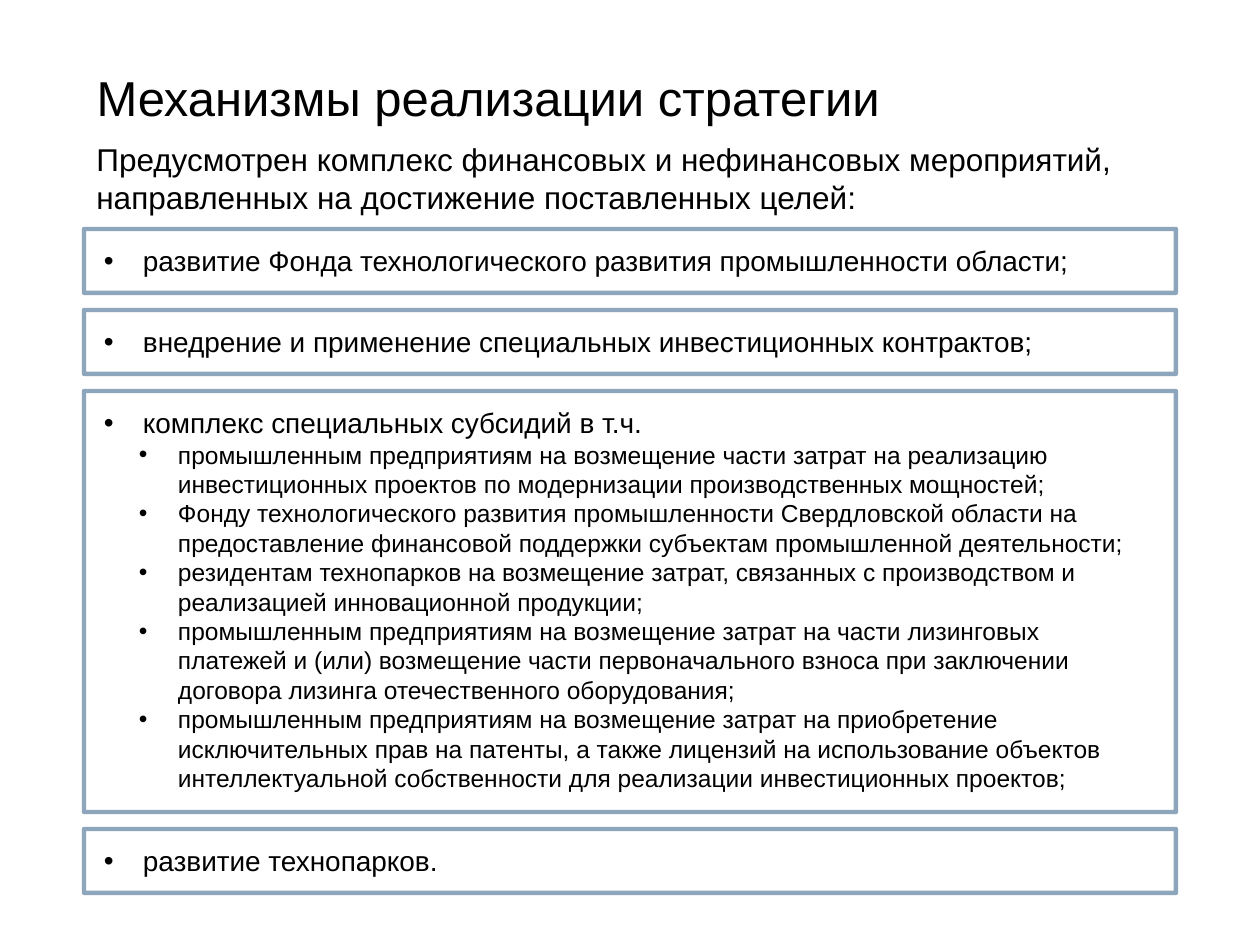
"""Build a slide listing the mechanisms that carry out a regional industry strategy."""
import lxml.etree
import pptx
import pptx.dml.color
import pptx.enum.shapes
import pptx.enum.text
import pptx.oxml.ns
import pptx.util

TITLE = "Механизмы реализации стратегии"
INTRO = (
    "Предусмотрен комплекс финансовых и нефинансовых мероприятий, "
    "направленных на достижение поставленных целей:"
)
SUBSIDIES = [
    "промышленным предприятиям на возмещение части затрат на реализацию "
    "инвестиционных проектов по модернизации производственных мощностей;",
    "Фонду технологического развития промышленности Свердловской области на "
    "предоставление финансовой поддержки субъектам промышленной деятельности;",
    "резидентам технопарков на возмещение затрат, связанных с производством и "
    "реализацией инновационной продукции;",
    "промышленным предприятиям на возмещение затрат на части лизинговых "
    "платежей и (или) возмещение части первоначального взноса при заключении "
    "договора лизинга отечественного оборудования;",
    "промышленным предприятиям на возмещение затрат на приобретение "
    "исключительных прав на патенты, а также лицензий на использование объектов "
    "интеллектуальной собственности для реализации инвестиционных проектов;",
]
MECHANISMS = [
    ("развитие Фонда технологического развития промышленности области;", [], 64),
    ("внедрение и применение специальных инвестиционных контрактов;", [], 64),
    ("комплекс специальных субсидий в т.ч.", SUBSIDIES, 421),
    ("развитие технопарков.", [], 64),
]

BLACK = pptx.dml.color.RGBColor(0x00, 0x00, 0x00)
WHITE = pptx.dml.color.RGBColor(0xFF, 0xFF, 0xFF)
NAVY = pptx.dml.color.RGBColor(0x1F, 0x4E, 0x79)
FONT = "Arial"
LEFT, WIDTH = 84, 1092
FIRST_TOP, GAP = 229, 17
HANGING = 39
LEVELS = [(39, 16), (74, 14)]


def px(count):
    return pptx.util.Emu(round(count * 914400 / 126))


def place(shape, top, height):
    shape.left, shape.top = px(LEFT), px(top)
    shape.width, shape.height = px(WIDTH), px(height)


def write(para, text, size):
    para.text = text
    para.alignment = pptx.enum.text.PP_ALIGN.LEFT
    para.font.name = FONT
    para.font.size = pptx.util.Pt(size)
    para.font.color.rgb = BLACK


def add_bullet(para, level):
    margin, size = LEVELS[level]
    para.level = level
    properties = para._p.get_or_add_pPr()
    properties.set("marL", str(px(margin)))
    properties.set("indent", str(-px(HANGING)))
    font = lxml.etree.SubElement(properties, pptx.oxml.ns.qn("a:buFont"))
    font.set("typeface", FONT)
    bullet = lxml.etree.SubElement(properties, pptx.oxml.ns.qn("a:buChar"))
    bullet.set("char", "•")
    return size


def set_opacity(fill, percent):
    color = fill._xPr.find(".//" + pptx.oxml.ns.qn("a:srgbClr"))
    alpha = lxml.etree.SubElement(color, pptx.oxml.ns.qn("a:alpha"))
    alpha.set("val", str(percent * 1000))


def add_mechanism(page, heading, details, top, height):
    box = page.shapes.add_shape(pptx.enum.shapes.MSO_SHAPE.RECTANGLE, 0, 0, 0, 0)
    place(box, top, height)
    box.shadow.inherit = False
    box.fill.solid()
    box.fill.fore_color.rgb = WHITE
    set_opacity(box.fill, 80)
    box.line.width = pptx.util.Pt(2.5)
    box.line.color.rgb = NAVY
    set_opacity(box.line.fill, 50)
    frame = box.text_frame
    frame.word_wrap = True
    frame.vertical_anchor = pptx.enum.text.MSO_ANCHOR.TOP
    frame.margin_left, frame.margin_right = px(20), px(30)
    frame.margin_top = frame.margin_bottom = px(15)
    para = frame.paragraphs[0]
    write(para, heading, add_bullet(para, 0))
    for detail in details:
        para = frame.add_paragraph()
        write(para, detail, add_bullet(para, 1))


def main():
    deck = pptx.Presentation()
    deck.slide_width, deck.slide_height = px(1260), px(945)
    page = deck.slides.add_slide(deck.slide_layouts.get_by_name("Title Only"))

    title = page.shapes.title
    place(title, 26, 149)
    title.text_frame.vertical_anchor = pptx.enum.text.MSO_ANCHOR.MIDDLE
    title.text_frame.auto_size = pptx.enum.text.MSO_AUTO_SIZE.NONE
    write(title.text_frame.paragraphs[0], TITLE, 28)
    title.text_frame.paragraphs[0].line_spacing = 0.9

    intro = page.shapes.add_textbox(0, 0, 0, 0)
    place(intro, 134, 89)
    intro.text_frame.word_wrap = True
    write(intro.text_frame.paragraphs[0], INTRO, 18)

    top = FIRST_TOP
    for heading, details, height in MECHANISMS:
        add_mechanism(page, heading, details, top, height)
        top += height + GAP

    deck.save("out.pptx")


if __name__ == "__main__":
    main()
